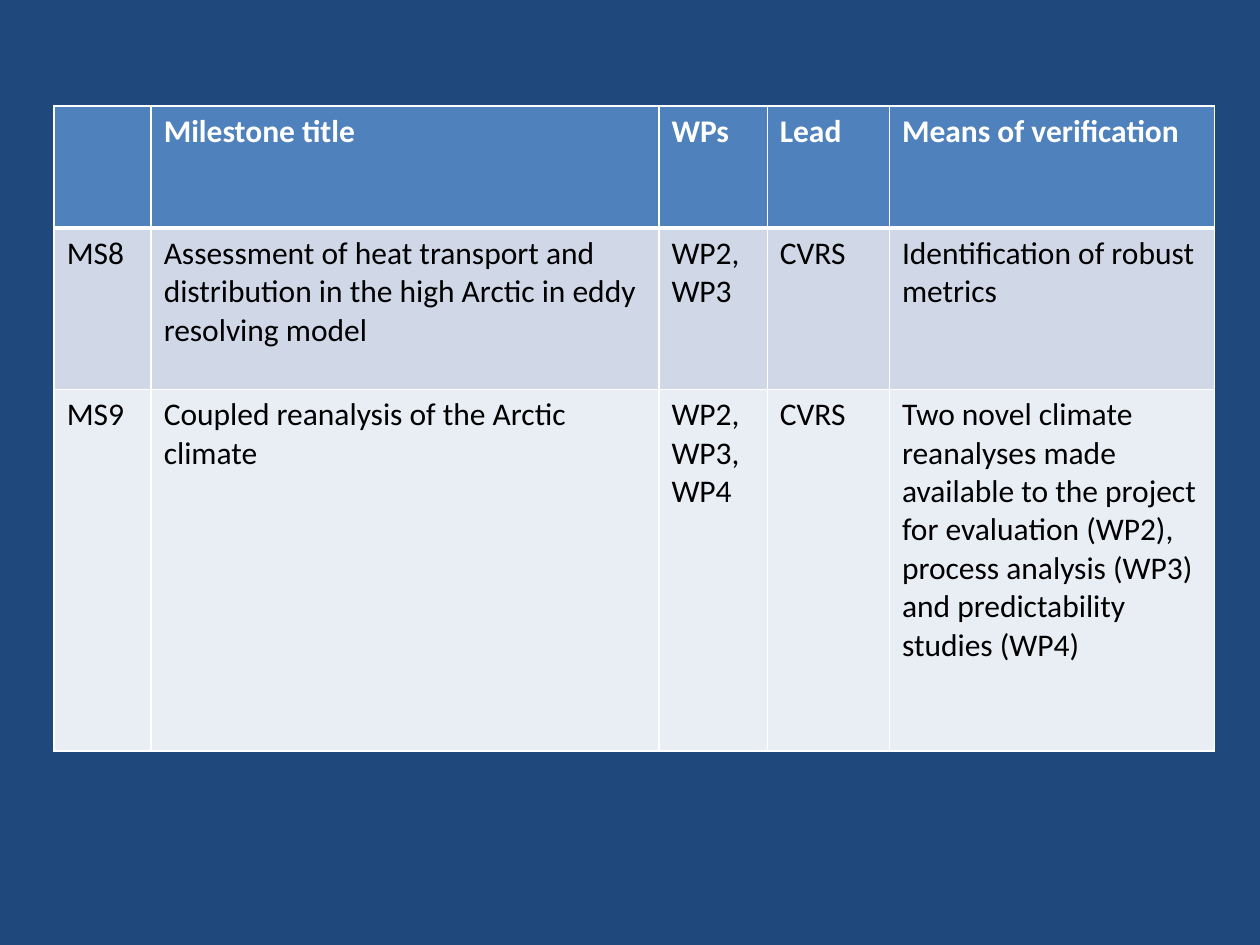
from dataclasses import dataclass

from lxml import etree
from pptx import Presentation
from pptx.dml.color import RGBColor
from pptx.oxml.ns import qn
from pptx.util import Inches, Pt

SLIDE_WIDTH, SLIDE_HEIGHT = Inches(10), Inches(7.5)
BLANK_LAYOUT = 6
TABLE_LEFT, TABLE_TOP = 0.043, 0.112
COLUMN_INCHES = (0.77, 4.03, 0.86, 0.97, 2.58)
ROW_INCHES = (0.97, 1.28, 2.87)
BORDER_TAGS = ("a:lnL", "a:lnR", "a:lnT", "a:lnB")

MILESTONES = (
    ("", "Milestone title", "WPs", "Lead", "Means of verification"),
    (
        "MS8",
        "Assessment of heat transport and\n"
        "distribution in the high Arctic in eddy resolving model",
        "WP2,\nWP3",
        "CVRS",
        "Identification of robust metrics",
    ),
    (
        "MS9",
        "Coupled reanalysis of the Arctic climate",
        "WP2,\nWP3,\nWP4",
        "CVRS",
        "Two novel climate reanalyses made available to the project "
        "for evaluation (WP2),\n"
        "process analysis (WP3) and predictability studies (WP4)",
    ),
)


@dataclass(frozen=True)
class Theme:
    """Colours, font and line weights of the slide."""

    background: str = "1F497D"
    row_fills: tuple = ("4F81BD", "D0D8E8", "E9EDF4")
    header_text: str = "FFFFFF"
    body_text: str = "000000"
    border: str = "FFFFFF"
    font: str = "Calibri"
    text_size: int = 18
    thin: int = 1
    thick: int = 3


THEME = Theme()


def paint(fill, colour):
    """Give a fill one solid colour."""
    fill.solid()
    fill.fore_color.rgb = RGBColor.from_string(colour)


def set_borders(cell, widths):
    """Draw the left, right, top and bottom borders of a cell."""
    properties = cell._tc.get_or_add_tcPr()
    for position, (tag, width) in enumerate(zip(BORDER_TAGS, widths)):
        border = etree.Element(qn(tag), w=str(Pt(width)))
        solid = etree.SubElement(border, qn("a:solidFill"))
        etree.SubElement(solid, qn("a:srgbClr"), val=THEME.border)
        properties.insert(position, border)


def write_cell(cell, wording, is_header):
    """Write and format the text of a cell."""
    cell.text_frame.text = wording
    colour = THEME.header_text if is_header else THEME.body_text
    for paragraph in cell.text_frame.paragraphs:
        font = paragraph.font
        for run in paragraph.runs:
            font = run.font
            font.name = THEME.font
            font.bold = is_header
            font.color.rgb = RGBColor.from_string(colour)
        font.size = Pt(THEME.text_size)


def add_milestone_table(slide):
    """Add the table of milestones."""
    table = slide.shapes.add_table(
        len(ROW_INCHES),
        len(COLUMN_INCHES),
        int(SLIDE_WIDTH * TABLE_LEFT),
        int(SLIDE_HEIGHT * TABLE_TOP),
        Inches(sum(COLUMN_INCHES)),
        Inches(sum(ROW_INCHES)),
    ).table
    for column, width in zip(table.columns, COLUMN_INCHES):
        column.width = Inches(width)
    for row_index, milestone in enumerate(MILESTONES):
        table.rows[row_index].height = Inches(ROW_INCHES[row_index])
        top = THEME.thick if row_index == 1 else THEME.thin
        bottom = THEME.thick if row_index == 0 else THEME.thin
        for column_index, wording in enumerate(milestone):
            cell = table.cell(row_index, column_index)
            write_cell(cell, wording, row_index == 0)
            paint(cell.fill, THEME.row_fills[row_index])
            set_borders(cell, (THEME.thin, THEME.thin, top, bottom))


def main():
    """Build and save the milestone slide."""
    presentation = Presentation()
    presentation.slide_width = SLIDE_WIDTH
    presentation.slide_height = SLIDE_HEIGHT
    slide = presentation.slides.add_slide(presentation.slide_layouts[BLANK_LAYOUT])
    paint(slide.background.fill, THEME.background)
    add_milestone_table(slide)
    presentation.save("out.pptx")


if __name__ == "__main__":
    main()
